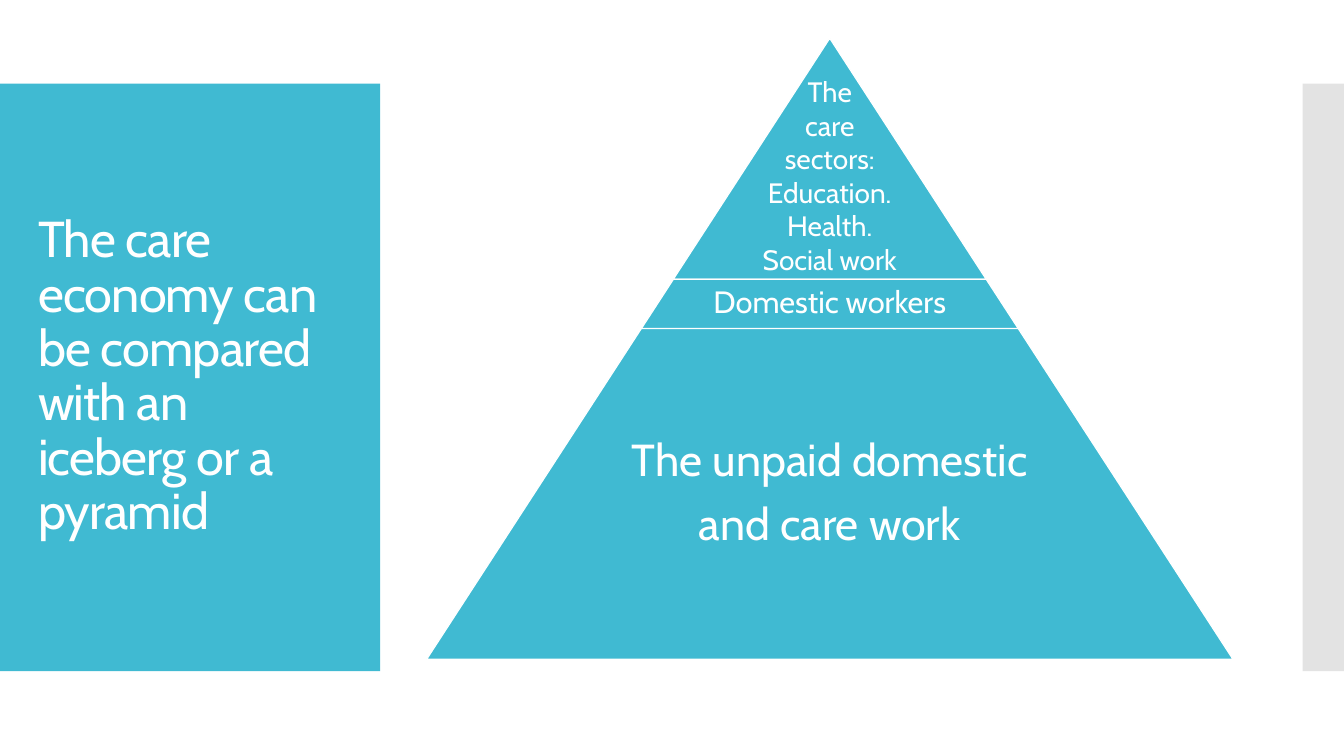
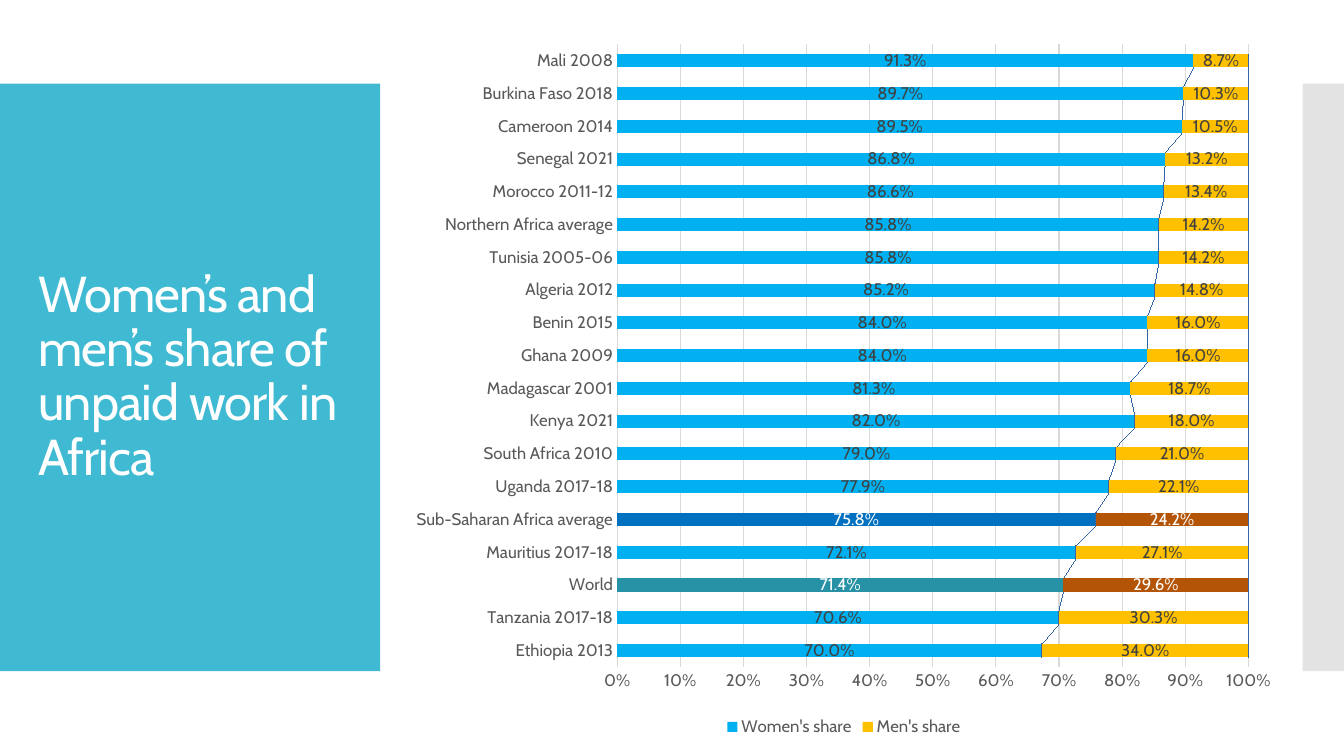
from lxml import etree
from pptx import Presentation
from pptx import util as u
from pptx.chart.data import CategoryChartData
from pptx.dml.color import RGBColor
from pptx.enum import chart as ch, shapes, text
from pptx.oxml import parse_xml
from pptx.oxml.ns import nsdecls, qn

# Content
PYRAMID_TITLE = "The care economy can be compared with an iceberg or a pyramid"
# lines, tier height, text width, size, line spacing, space after, anchor
TIERS = [
    (["The", "care", "sectors:", "Education.", "Health.", "Social work"],
     2.39, 3.1, 20, 1, 0, "bottom"),
    (["Domestic workers"], 0.49, 2.43, 22, 0.9, 7.7, "middle"),
    (["The unpaid domestic", "and care work"], 3.28, 5.2, 32, 0.9, 11.2, "middle"),
]
CHART_TITLE = "Women’s and men’s share of unpaid work in Africa"
SERIES = ("Women's share", "Men's share")
SHARES = [
    ("Ethiopia 2013", 0.7, 0.34),
    ("Tanzania 2017-18", 0.706, 0.303),
    ("World", 0.714, 0.296),
    ("Mauritius 2017-18", 0.721, 0.271),
    ("Sub-Saharan Africa average", 0.758, 0.242),
    ("Uganda 2017-18", 0.779, 0.221),
    ("South Africa 2010", 0.79, 0.21),
    ("Kenya 2021", 0.82, 0.18),
    ("Madagascar 2001", 0.813, 0.187),
    ("Ghana 2009", 0.84, 0.16),
    ("Benin 2015", 0.84, 0.16),
    ("Algeria 2012", 0.852, 0.148),
    ("Tunisia 2005-06", 0.858, 0.142),
    ("Northern Africa average", 0.858, 0.142),
    ("Morocco 2011-12", 0.866, 0.134),
    ("Senegal 2021", 0.868, 0.132),
    ("Cameroon 2014", 0.895, 0.105),
    ("Burkina Faso 2018", 0.897, 0.103),
    ("Mali 2008", 0.913, 0.087),
]

# Style
FONT = "Cabin"
COLORS = {
    "teal": "40BAD2", "band": "C8C8C8", "white": "FFFFFF",
    "women": "00B0F0", "men": "FFC000", "label": "404040",
    "axis": "595959", "grid": "D9D9D9", "link": "3465A4",
    "women_world": "2791A6", "women_region": "0070C0", "men_average": "B35406",
}
SERIES_COLORS = ("women", "men")
AVERAGES = {"World": ("women_world", "men_average"),
            "Sub-Saharan Africa average": ("women_region", "men_average")}
APEX_X, APEX_Y = 8.23, 0.38
SLOPE = 0.649  # half width gained per unit of height
PLOT_BOX = {"x": 0.245, "y": 0.02, "w": 0.71, "h": 0.876}


def rgb(name):
    return RGBColor.from_string(COLORS[name])


def fill(target, color):
    target.fill.solid()
    target.fill.fore_color.rgb = rgb(color)


def style_font(font, size, color):
    font.name, font.size = FONT, u.Pt(size)
    font.color.rgb = rgb(color)


def add_block(slide, kind, box, color, line=None):
    sp = slide.shapes.add_shape(kind, *map(u.Inches, box))
    sp.shadow.inherit = False
    fill(sp, color)
    if line:
        sp.line.color.rgb, sp.line.width = rgb(line), u.Pt(0.85)
    else:
        sp.line.fill.background()
    return sp


def add_text(slide, lines, box, size, color="white", align="left", anchor="middle",
             spacing=0.9, after=0, inset=(0.1, 0.05), tracking=None):
    tf = slide.shapes.add_textbox(*map(u.Inches, box)).text_frame
    tf.word_wrap = True
    tf.vertical_anchor = getattr(text.MSO_ANCHOR, anchor.upper())
    tf.margin_left = tf.margin_right = u.Inches(inset[0])
    tf.margin_top = tf.margin_bottom = u.Inches(inset[1])
    for i, line in enumerate(lines):
        p = tf.add_paragraph() if i else tf.paragraphs[0]
        p.alignment = getattr(text.PP_ALIGN, align.upper())
        p.line_spacing, p.space_after = spacing, u.Pt(after)
        r = p.add_run()
        r.text = line
        style_font(r.font, size, color)
        if tracking:
            r.font._element.set("spc", str(int(tracking * 100)))


def new_slide(prs, title):
    """Blank slide with the title panel and the side band."""
    slide = prs.slides.add_slide(prs.slide_layouts[6])
    rect = shapes.MSO_SHAPE.RECTANGLE
    add_block(slide, rect, (0, 0.83, 3.77, 5.83), "teal")
    band = add_block(slide, rect, (12.92, 0.83, 0.42, 5.83), "band")
    clr = band._element.spPr.find(qn("a:solidFill"))[0]
    etree.SubElement(clr, qn("a:alpha")).set("val", "50000")
    add_text(slide, [title], (0.28, 1.23, 3.22, 5.03), 36, tracking=-0.6)
    return slide


def add_pyramid(slide):
    depth = 0
    for lines, height, text_w, size, spacing, after, anchor in TIERS:
        top = APEX_Y + depth
        depth += height
        half = SLOPE * depth
        tier = add_block(slide, shapes.MSO_SHAPE.TRAPEZOID,
                         (APEX_X - half, top, 2 * half, height), "teal", "white")
        tier.adjustments[0] = SLOPE
        add_text(slide, lines, (APEX_X - text_w / 2, top, text_w, height), size,
                 align="center", anchor=anchor, spacing=spacing, after=after,
                 inset=(0.03, 0.03))


def style_axes(chart):
    cat, val = chart.category_axis, chart.value_axis
    for axis in (cat, val):
        axis.major_tick_mark = axis.minor_tick_mark = ch.XL_TICK_MARK.NONE
        style_font(axis.tick_labels.font, 12, "axis")
    grid = val.major_gridlines.format.line
    for line in (cat.format.line, grid):
        line.color.rgb, line.width = rgb("grid"), u.Pt(0.75)
    val.format.line.fill.background()
    val.tick_labels.number_format = "0%"
    val.tick_labels.number_format_is_linked = False


def style_series(series, color, averages):
    center = ch.XL_LABEL_POSITION.CENTER
    fill(series.format, color)
    labels = series.data_labels
    labels.show_value, labels.position = True, center
    labels.number_format, labels.number_format_is_linked = "0.0%", False
    style_font(labels.font, 12, "label")
    for index, point_color in averages.items():
        point = series.points[index]
        fill(point.format, point_color)
        style_font(point.data_label.font, 12, "white")
        point.data_label.position = center


def add_share_chart(slide):
    names = [row[0] for row in SHARES]
    data = CategoryChartData(number_format="0.0%")
    data.categories = names
    for col, name in enumerate(SERIES, 1):
        data.add_series(name, [row[col] for row in SHARES])
    chart = slide.shapes.add_chart(
        ch.XL_CHART_TYPE.BAR_STACKED_100,
        *map(u.Inches, (3.96, 0.3, 8.82, 7.05)), data).chart
    chart.has_title = False
    style_font(chart.font, 12, "axis")
    style_axes(chart)
    chart.has_legend = True
    chart.legend.position = ch.XL_LEGEND_POSITION.BOTTOM
    chart.legend.include_in_layout = False
    style_font(chart.legend.font, 12, "axis")
    plot = chart.plots[0]
    plot.gap_width, plot.overlap, plot.vary_by_categories = 150, 100, False
    for col, series in enumerate(plot.series):
        style_series(series, SERIES_COLORS[col],
                     {names.index(n): c[col] for n, c in AVERAGES.items()})

    # Lines joining the bars
    plot._element.find(qn("c:overlap")).addnext(parse_xml(
        f'<c:serLines {nsdecls("c", "a")}><c:spPr><a:ln w="3175"><a:solidFill>'
        f'<a:srgbClr val="{COLORS["link"]}"/></a:solidFill></a:ln></c:spPr></c:serLines>'))

    # Fixed plot area
    area = chart._chartSpace.chart.plotArea
    for old in area.findall(qn("c:layout")):
        area.remove(old)
    modes = "".join(f'<c:{k}Mode val="edge"/>' for k in "xy")
    sizes = "".join(f'<c:{k} val="{v}"/>' for k, v in PLOT_BOX.items())
    area.insert(0, parse_xml(
        f'<c:layout {nsdecls("c")}><c:manualLayout><c:layoutTarget val="inner"/>'
        f'{modes}{sizes}</c:manualLayout></c:layout>'))


def main():
    prs = Presentation()
    prs.slide_width, prs.slide_height = u.Inches(13.33), u.Inches(7.5)
    add_pyramid(new_slide(prs, PYRAMID_TITLE))
    add_share_chart(new_slide(prs, CHART_TITLE))
    prs.save("out.pptx")


if __name__ == "__main__":
    main()
